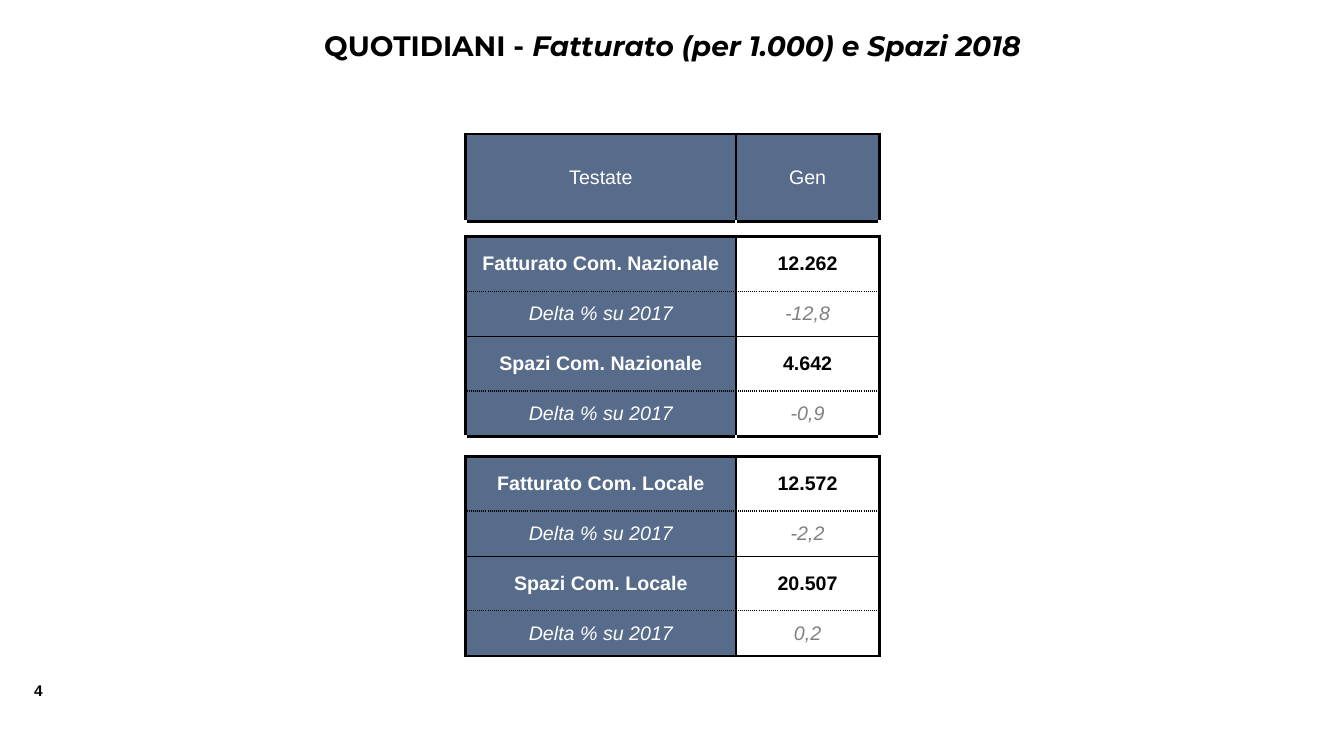
from dataclasses import dataclass

from lxml import etree
from pptx import Presentation
from pptx import util as u
from pptx.dml import color
from pptx.enum import text
from pptx.oxml import ns

BLACK, WHITE, GREY, BLUE = "000000", "FFFFFF", "808080", "576B8A"


@dataclass(frozen=True)
class Border:
    width: float
    hue: str = BLACK
    dash: str = "solid"


@dataclass(frozen=True)
class Span:
    words: str
    size: float
    hue: str
    font: str = "Arial"
    bold: bool = False
    italic: bool = False


@dataclass(frozen=True)
class Row:
    height: float
    bottom: Border
    label: str = ""
    value: str = ""
    bold: bool = False
    italic: bool = False
    value_hue: str = BLACK
    value_fill: str = WHITE


THICK, THIN = Border(2.25), Border(1)
DOTTED, CLEAR = Border(1, dash="sysDot"), Border(2.25, WHITE)
COLUMN_WIDTHS = (2.68, 1.42)


def rgb(hue: str) -> color.RGBColor:
    return color.RGBColor.from_string(hue)


def add_span(para, span: Span) -> None:
    run = para.add_run()
    run.text = span.words
    font = run.font
    font.name, font.size = span.font, u.Pt(span.size)
    font.bold, font.italic = span.bold, span.italic
    font.color.rgb = rgb(span.hue)


def add_text(page, left: float, top: float, width: float, height: float,
             spans: list[Span], wrap: bool, align) -> None:
    box = page.shapes.add_textbox(*map(u.Inches, (left, top, width, height)))
    box.text_frame.word_wrap = wrap
    para = box.text_frame.paragraphs[0]
    para.alignment = align
    for span in spans:
        add_span(para, span)


def set_borders(cell, side: Border, top: Border, bottom: Border) -> None:
    properties = cell._tc.get_or_add_tcPr()
    for tag, border in (("lnL", side), ("lnR", side), ("lnT", top), ("lnB", bottom)):
        line = etree.SubElement(properties, ns.qn(f"a:{tag}"), w=str(u.Pt(border.width)))
        fill = etree.SubElement(line, ns.qn("a:solidFill"))
        etree.SubElement(fill, ns.qn("a:srgbClr"), val=border.hue)
        etree.SubElement(line, ns.qn("a:prstDash"), val=border.dash)


def fill_cell(cell, span: Span, fill: str, inset: tuple[float, float]) -> None:
    cell.fill.solid()
    cell.fill.fore_color.rgb = rgb(fill)
    cell.vertical_anchor = text.MSO_ANCHOR.MIDDLE
    cell.margin_left = cell.margin_right = u.Inches(inset[0])
    cell.margin_top = cell.margin_bottom = u.Inches(inset[1])
    para = cell.text_frame.paragraphs[0]
    para.alignment = text.PP_ALIGN.CENTER
    if span.words:
        add_span(para, span)
    else:  # a small end mark keeps the gap row low
        etree.SubElement(para._p, ns.qn("a:endParaRPr"), sz="400")


def metric(name: str, amount: str, delta: str, bottom: Border) -> list[Row]:
    """The row of an amount and the row of its change on the year before."""
    return [
        Row(0.54, DOTTED, name, amount, bold=True),
        Row(0.45, bottom, "Delta % su 2017", delta, italic=True, value_hue=GREY),
    ]


def add_figures(page, left: float, top: float, rows: list[Row]) -> None:
    height = sum(row.height for row in rows)
    frame = page.shapes.add_table(
        len(rows), len(COLUMN_WIDTHS),
        *map(u.Inches, (left, top, sum(COLUMN_WIDTHS), height)))
    table = frame.table
    table.first_row = table.horz_banding = False
    for column, width in zip(table.columns, COLUMN_WIDTHS):
        column.width = u.Inches(width)
    above = THICK
    for index, row in enumerate(rows):
        table.rows[index].height = u.Inches(row.height)
        label, value = table.rows[index].cells
        for cell in (label, value):
            set_borders(cell, THICK if row.label else CLEAR, above, row.bottom)
        style = {"bold": row.bold, "italic": row.italic}
        fill_cell(label, Span(row.label, 14, WHITE, **style),
                  BLUE if row.label else WHITE, (0.1, 0.05) if row.label else (0, 0))
        fill_cell(value, Span(row.value, 14, row.value_hue, **style),
                  row.value_fill, (0, 0))
        above = row.bottom


def main() -> None:
    deck = Presentation()
    deck.slide_width, deck.slide_height = u.Inches(13.33), u.Inches(7.5)
    page = deck.slides.add_slide(deck.slide_layouts[6])

    add_text(page, 0.24, 6.71, 0.42, 0.29, [Span("4", 11, BLACK, bold=True)],
             False, text.PP_ALIGN.LEFT)
    add_text(page, 1.67, 0.23, 10, 0.44, [
        Span("QUOTIDIANI - ", 20, BLACK, "Montserrat", bold=True),
        Span("Fatturato (per 1.000) e Spazi 2018", 20, BLACK, "Montserrat",
             bold=True, italic=True),
    ], True, text.PP_ALIGN.CENTER)
    add_figures(page, 4.62, 1.33, [
        Row(0.87, THICK, "Testate", "Gen", value_hue=WHITE, value_fill=BLUE),
        Row(0.15, THICK),
        *metric("Fatturato Com. Nazionale", "12.262", "-12,8", THIN),
        *metric("Spazi Com. Nazionale", "4.642", "-0,9", THICK),
        Row(0.2, THICK),
        *metric("Fatturato Com. Locale", "12.572", "-2,2", THIN),
        *metric("Spazi Com. Locale", "20.507", "0,2", THICK),
    ])
    deck.save("out.pptx")


if __name__ == "__main__":
    main()
